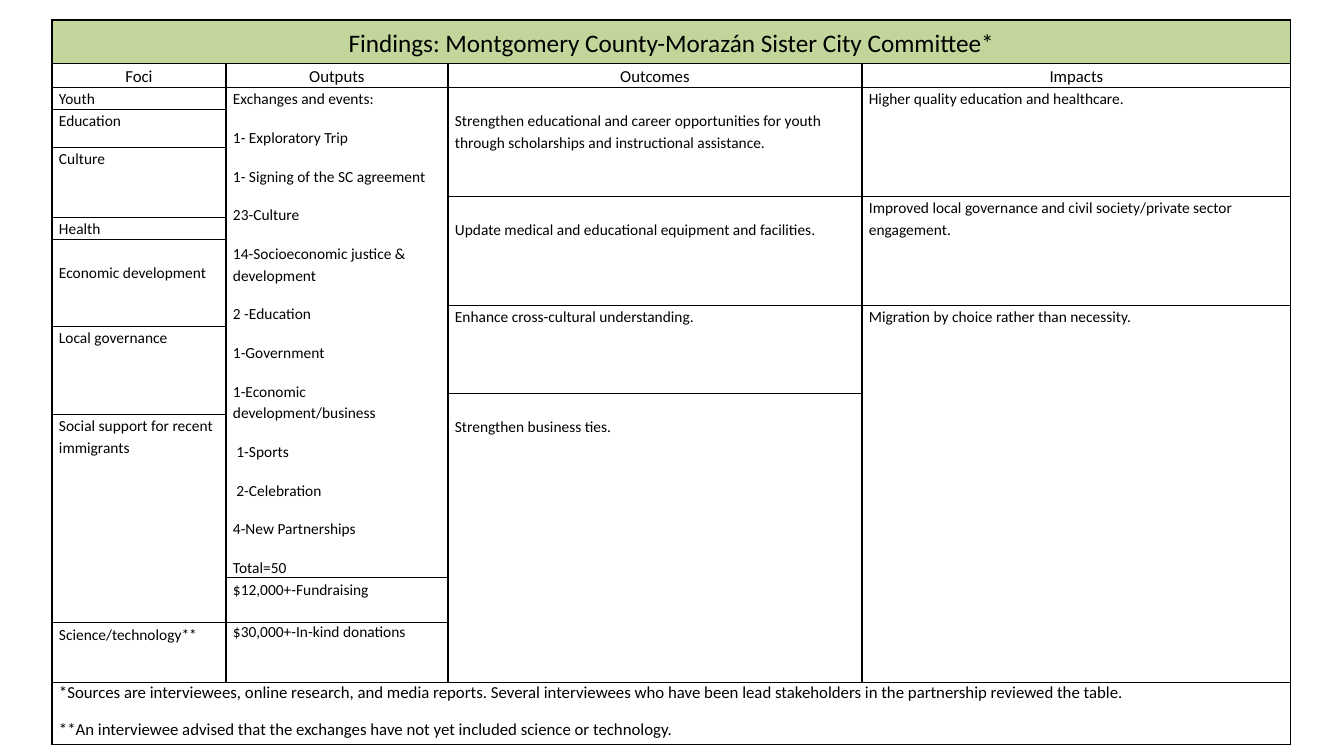
from lxml.etree import SubElement
from pptx import Presentation
from pptx.dml.color import RGBColor
from pptx.enum.text import PP_ALIGN as Align
from pptx.oxml.ns import qn
from pptx.util import Emu, Pt

PX = 9144000 // 1008
FONT = "Calibri"
INK = "000000"
BANNER_FILL = "C2D69B"
COLUMN_WIDTHS = [174, 222, 414, 429]
ROW_HEIGHTS = [42, 24, 22, 38, 49, 21, 22, 66, 21, 67, 21, 163, 45, 60, 62]
TEXT_LINE = 22

TITLE = "Findings: Montgomery County-Morazán Sister City Committee*"
HEADINGS = ["Foci", "Outputs", "Outcomes", "Impacts"]
EXCHANGES = [
    "Exchanges and events:",
    "1- Exploratory Trip",
    "1- Signing of the SC agreement",
    "23-Culture",
    "14-Socioeconomic justice & development",
    "2 -Education",
    "1-Government",
    "1-Economic development/business",
    " 1-Sports",
    " 2-Celebration",
    "4-New Partnerships",
    "Total=50",
]
FOOTNOTES = [
    "*Sources are interviewees, online research, and media reports. Several interviewees "
    "who have been lead stakeholders in the partnership reviewed the table.",
    "**An interviewee advised that the exchanges have not yet included science or technology.",
]
FINDINGS = [
    [
        (1, 0, ["Youth"]),
        (1, 0, ["Education"]),
        (2, 0, ["Culture"]),
        (1, 0, ["Health"]),
        (2, TEXT_LINE, ["Economic development"]),
        (2, 0, ["Local governance"]),
        (2, 0, ["Social support for recent immigrants"]),
        (1, 0, ["Science/technology**"]),
    ],
    [
        (10, 0, EXCHANGES),
        (1, 0, ["$12,000+-Fundraising"]),
    ],
    [
        (3, TEXT_LINE, ["Strengthen educational and career opportunities for youth "
                        "through scholarships and instructional assistance."]),
        (3, TEXT_LINE, ["Update medical and educational equipment and facilities."]),
        (2, 0, ["Enhance cross-cultural understanding."]),
        (4, TEXT_LINE, ["Strengthen business ties."]),
    ],
    [
        (3, 0, ["Higher quality education and healthcare."]),
        (3, 0, ["Improved local governance and civil society/private sector engagement."]),
        (6, 0, ["Migration by choice rather than necessity."]),
    ],
]


def px(length):
    return Emu(length * PX)


def color(hex_code):
    return RGBColor.from_string(hex_code)


def add_grid(slide):
    frame = slide.shapes.add_table(
        len(ROW_HEIGHTS), len(COLUMN_WIDTHS), px(52), px(20),
        px(sum(COLUMN_WIDTHS)), px(sum(ROW_HEIGHTS)))
    grid = frame.table
    grid.first_row = False
    grid.horz_banding = False
    for column, width in zip(grid.columns, COLUMN_WIDTHS):
        column.width = px(width)
    for row, height in zip(grid.rows, ROW_HEIGHTS):
        row.height = px(height)
    for cell in grid.iter_cells():
        draw_borders(cell)
        cell.fill.background()
    return grid


def draw_borders(cell):
    properties = cell._tc.get_or_add_tcPr()
    for side in ("a:lnL", "a:lnR", "a:lnT", "a:lnB"):
        border = SubElement(properties, qn(side), w=str(Pt(1)))
        solid = SubElement(border, qn("a:solidFill"))
        SubElement(solid, qn("a:srgbClr"), val=INK)


def write_cell(cell, lines, size=11, align=Align.LEFT, spacing=1.15, top=0, bottom=0):
    cell.margin_left = cell.margin_right = px(7)
    cell.margin_top = px(top)
    cell.margin_bottom = px(bottom)
    cell.text_frame.text = "\n".join(lines)
    for index, paragraph in enumerate(cell.text_frame.paragraphs):
        paragraph.alignment = align
        paragraph.line_spacing = spacing
        paragraph.space_before = Pt(12 if index else 0)
        for run in paragraph.runs:
            run.font.name = FONT
            run.font.size = Pt(size)
            run.font.color.rgb = color(INK)


def span_row(grid, row):
    first = grid.cell(row, 0)
    first.merge(grid.cell(row, len(COLUMN_WIDTHS) - 1))
    return first


def fill_column(grid, column, entries):
    row = 2
    for span, top, lines in entries:
        cell = grid.cell(row, column)
        if span > 1:
            cell.merge(grid.cell(row + span - 1, column))
        write_cell(cell, lines, top=top)
        row += span


def main():
    deck = Presentation()
    deck.slide_width = px(1344)
    deck.slide_height = px(756)
    slide = deck.slides.add_slide(deck.slide_layouts[6])
    grid = add_grid(slide)

    banner = span_row(grid, 0)
    write_cell(banner, [TITLE], size=18, align=Align.CENTER, top=4, bottom=4)
    banner.fill.solid()
    banner.fill.fore_color.rgb = color(BANNER_FILL)

    for column, (heading, entries) in enumerate(zip(HEADINGS, FINDINGS)):
        write_cell(grid.cell(1, column), [heading], size=12, align=Align.CENTER)
        fill_column(grid, column, entries)

    write_cell(grid.cell(13, 1), ["$30,000+-In-kind donations"], spacing=1.0)
    write_cell(span_row(grid, 14), FOOTNOTES, size=12, spacing=1.0)
    deck.save("out.pptx")


if __name__ == "__main__":
    main()
